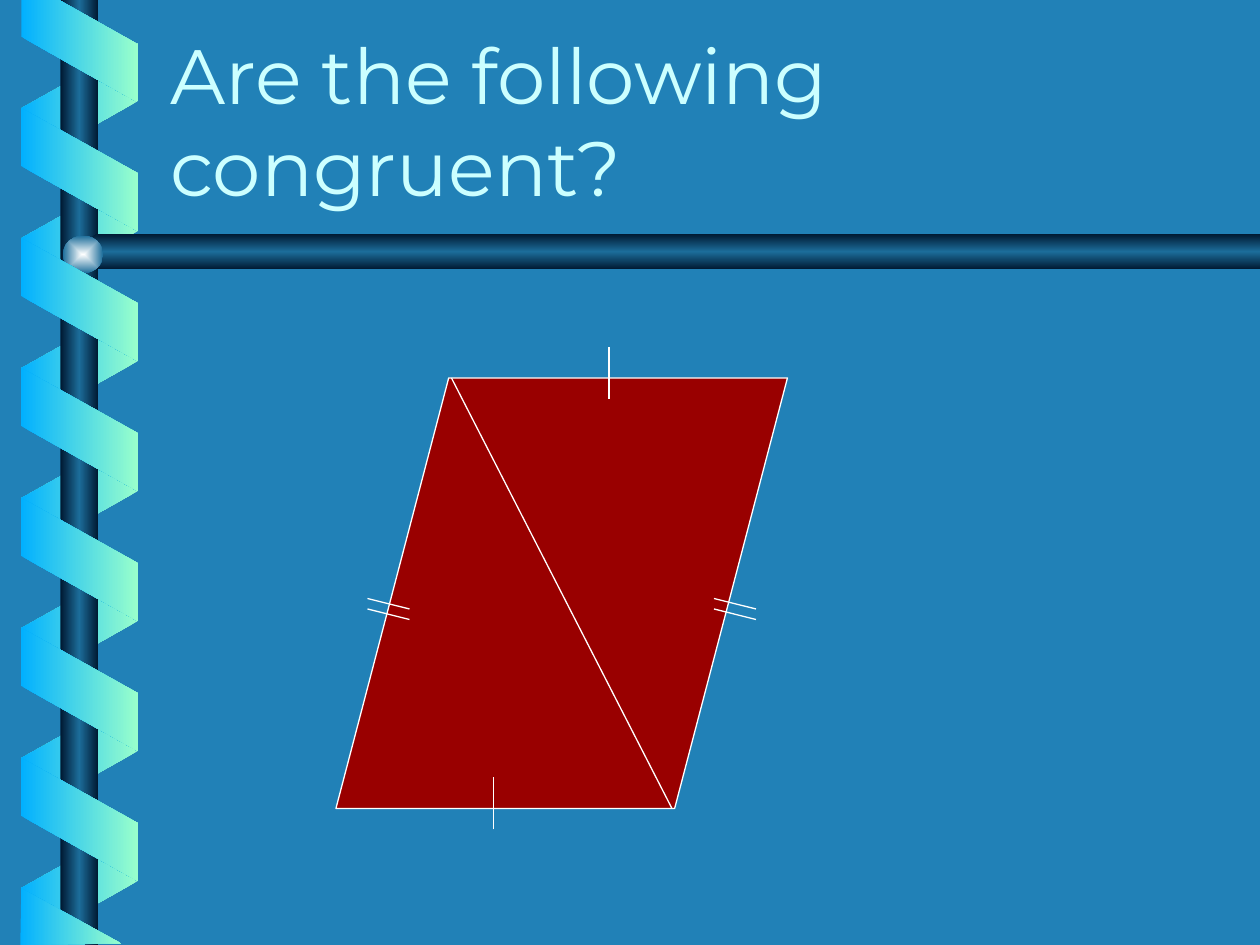
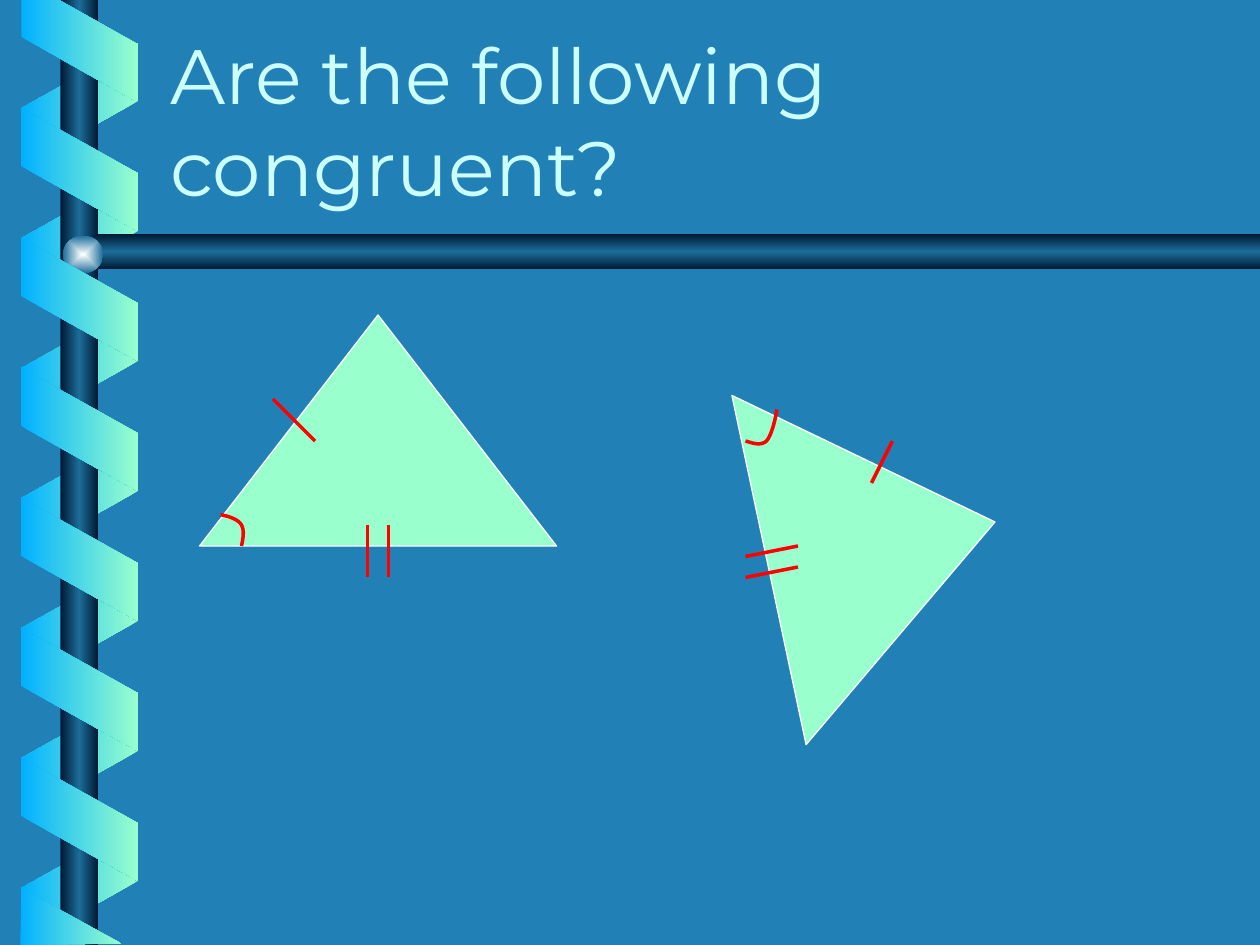
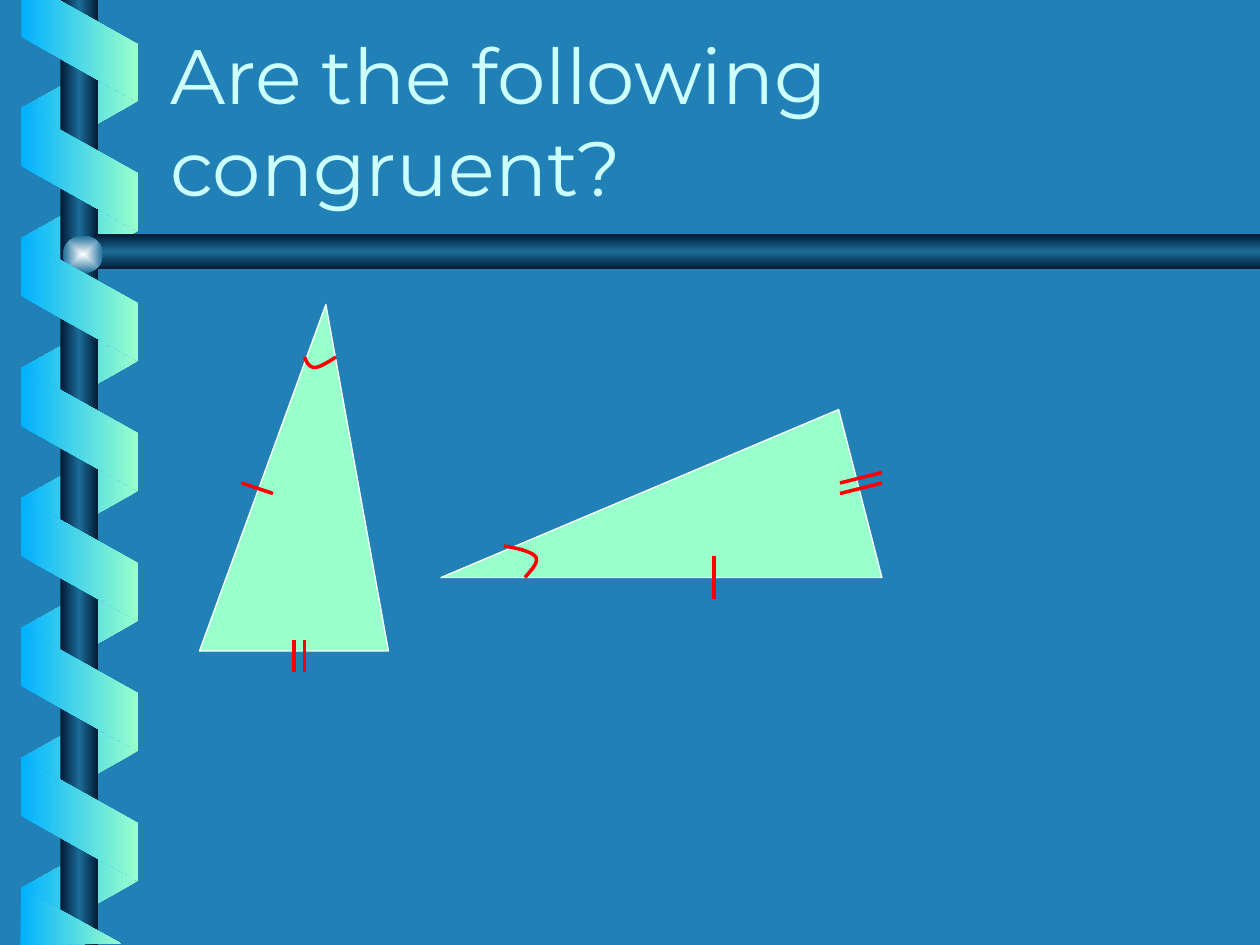
from collections import namedtuple

from lxml import etree
from pptx import Presentation
from pptx import util as u
from pptx.dml.color import RGBColor
from pptx.enum import shapes, text
from pptx.oxml import ns, parse_xml

COLOURS = {
    "background": "2181B7", "title": "CCFFFF", "outline": "FFFFFF",
    "parallelogram": "990000", "triangle": "99FFCC", "mark": "FF0000",
    "ribbon_blue": "01B0FF", "ribbon_green": "99FFCC",
    "pole_edge": "001932", "pole_middle": "1C6D9A", "knob_centre": "FEFFFF",
}
FONT = "Montserrat"
TITLE = "Are the following congruent?"
KIND = shapes.MSO_SHAPE
STEP = 2.54 / 12
POLE = ("pole_edge", "pole_middle", "pole_edge")
RIBBON = ("ribbon_blue", "ribbon_green")

Box = namedtuple("Box", "left top width height")
SLIDE = Box(0, 0, 25.4, 19.05)
SPIRAL = Box(0.36, 0, 2.49, 19.05)
DIVIDER = Box(1.27, 4.72, 24.13, 0.79)
TITLE_BOX = Box(3.18, 0.41, 21.59, 3.99)


def colour(name):
    return RGBColor.from_string(COLOURS[name])


def paint_gradient(shape, names, angle=0, radial=False):
    stops = "".join(
        f'<a:gs pos="{100000 * index // (len(names) - 1)}">'
        f'<a:srgbClr val="{COLOURS[name]}"/></a:gs>'
        for index, name in enumerate(names))
    direction = f'<a:lin ang="{angle * 60000}" scaled="0"/>'
    if radial:
        direction = ('<a:path path="shape"><a:fillToRect l="50000" t="50000" '
                     'r="50000" b="50000"/></a:path>')
    gradient = parse_xml(f'<a:gradFill {ns.nsdecls("a")} rotWithShape="0">'
                         f'<a:gsLst>{stops}</a:gsLst>{direction}</a:gradFill>')
    shape.fill.background()
    properties = shape._element.spPr
    properties.replace(properties.find(ns.qn("a:noFill")), gradient)
    shape.line.fill.background()
    shape.shadow.inherit = False


def add_preset(parent, kind, box, adjustment=None, rotation=0, flip=False):
    shape = parent.shapes.add_shape(kind, *map(u.Cm, box))
    if adjustment is not None:
        shape.adjustments[0] = adjustment
    shape.rotation = rotation
    if flip:
        shape._element.spPr.find(ns.qn("a:xfrm")).set("flipH", "1")
    return shape


def add_outline(parent, points, close):
    points = [(u.Cm(x), u.Cm(y)) for x, y in points]
    builder = parent.shapes.build_freeform(*points[0])
    builder.add_line_segments(points[1:], close=close)
    return builder.convert_to_shape()


def draw_spiral_backs(slide, box):
    group = slide.shapes.add_group_shape()
    for turn in range(7):
        strip = Box(box.left, box.top + 0.93 + 2.62 * turn, box.width, 2.36)
        shape = add_preset(group, KIND.PARALLELOGRAM, strip, 0.56, 90, True)
        paint_gradient(shape, RIBBON[::-1])


def draw_spiral_fronts(slide, box):
    group = slide.shapes.add_group_shape()
    for turn in range(6):
        strip = Box(box.left, box.top + 2.24 + 2.62 * turn, box.width, 2.36)
        shape = add_preset(group, KIND.PARALLELOGRAM, strip, 0.56, 270)
        paint_gradient(shape, RIBBON)
    top_fold = [(0.07, 0), (0.07, 0.74), (2.41, 2.06), (2.41, 0.89), (0.83, 0)]
    bottom_fold = [(2.08, 19.02), (0.07, 17.91), (0.05, 19.05)]
    for fold in (top_fold, bottom_fold):
        points = [(box.left + x, box.top + y) for x, y in fold]
        paint_gradient(add_outline(group, points, True), RIBBON)


def draw_pole(slide, box):
    pole = Box(box.left + 0.86, box.top, 0.76, box.height)
    paint_gradient(add_preset(slide, KIND.RECTANGLE, pole), POLE)


def draw_divider(slide, box):
    bar = Box(box.left + 0.25, box.top, box.width - 0.25, 0.71)
    shape = add_preset(slide, KIND.PENTAGON, bar, 0.59, flip=True)
    paint_gradient(shape, POLE, 90)
    knob = Box(box.left, box.top + 0.03, 0.81, 0.76)
    paint_gradient(add_preset(slide, KIND.OVAL, knob),
                   ("knob_centre", "pole_middle"), radial=True)


def draw_title(slide, box):
    frame = slide.shapes.add_textbox(*map(u.Cm, box)).text_frame
    frame.word_wrap = True
    frame.auto_size = text.MSO_AUTO_SIZE.SHAPE_TO_FIT_TEXT
    frame.vertical_anchor = text.MSO_ANCHOR.BOTTOM
    run = frame.paragraphs[0].add_run()
    run.text = TITLE
    run.font.name = FONT
    run.font.size = u.Pt(44)
    run.font.color.rgb = colour("title")


class Figure:
    def __init__(self, slide, left, top):
        self.group = slide.shapes.add_group_shape()
        self.left, self.top = left, top

    def place(self, x, y):
        return (self.left + x) * STEP, (self.top + y) * STEP

    def add_polygon(self, kind, fill, x, y, width, height, adjustment=0.5, rotation=0):
        box = Box(*self.place(x, y), width * STEP, height * STEP)
        shape = add_preset(self.group, kind, box, adjustment, rotation)
        shape.fill.solid()
        shape.fill.fore_color.rgb = colour(fill)
        shape.line.color.rgb = colour("outline")
        shape.line.width = u.Pt(0.75)
        shape.shadow.inherit = False

    def add_lines(self, ends, name="mark", width=2):
        for x1, y1, x2, y2 in ends:
            connector = self.group.shapes.add_connector(
                shapes.MSO_CONNECTOR.STRAIGHT,
                *map(u.Cm, self.place(x1, y1) + self.place(x2, y2)))
            connector.line.color.rgb = colour(name)
            connector.line.width = u.Pt(width)
            etree.SubElement(connector._element.spPr, ns.qn("a:effectLst"))

    def add_angle_mark(self, knots, pieces=10):
        points = [knots[0]]
        for start in range(0, len(knots) - 1, 3):
            a, b, c, d = knots[start:start + 4]
            for piece in range(1, pieces + 1):
                t = piece / pieces
                weights = ((1 - t) ** 3, 3 * t * (1 - t) ** 2, 3 * t * t * (1 - t), t ** 3)
                points.append(tuple(
                    sum(weight * knot[axis] for weight, knot in zip(weights, (a, b, c, d)))
                    for axis in (0, 1)))
        shape = add_outline(self.group, [self.place(*point) for point in points], False)
        shape.fill.background()
        shape.line.color.rgb = colour("mark")
        shape.line.width = u.Pt(2)
        shape.shadow.inherit = False


def draw_split_parallelogram(slide):
    figure = Figure(slide, 32, 33)
    figure.add_polygon(KIND.PARALLELOGRAM, "parallelogram", 0, 3, 43, 41, 0.262)
    diagonal = [(11, 3, 32, 44)]
    side_ticks = [(x, y, x + 4, y + 1) for x in (3, 36) for y in (24, 25)]
    base_ticks = [(15, 46, 15, 41), (26, 5, 26, 0)]
    figure.add_lines(diagonal + side_ticks + base_ticks, "outline", 0.75)


def draw_turned_triangles(slide):
    figure = Figure(slide, 19, 30)
    figure.add_polygon(KIND.ISOSCELES_TRIANGLE, "triangle", 0, 0, 34, 22)
    figure.add_polygon(KIND.ISOSCELES_TRIANGLE, "triangle", 48, 11, 34, 22, rotation=78)
    figure.add_lines([(7, 8, 11, 12), (66, 12, 64, 16)])
    figure.add_lines([(x, 20, x, 25) for x in (16, 18)])
    figure.add_lines([(57, y, 52, y + 1) for y in (22, 24)])
    figure.add_angle_mark([(2, 19), (2.84, 19.2), (3.68, 19.44), (4, 20),
                           (4.28, 20.52), (4.16, 21.24), (4, 22)])
    figure.add_angle_mark([(52, 12), (52.76, 12.24), (53.48, 12.48), (54, 12),
                           (54.44, 11.52), (54.8, 10.2), (55, 9)])


def draw_scalene_triangles(slide):
    figure = Figure(slide, 19, 29)
    figure.add_polygon(KIND.ISOSCELES_TRIANGLE, "triangle", 0, 0, 18, 33, 0.669)
    figure.add_polygon(KIND.ISOSCELES_TRIANGLE, "triangle", 23, 10, 42, 16, 0.902)
    figure.add_lines([(4, 17, 7, 18), (49, 28, 49, 24)])
    figure.add_lines([(x, 32, x, 35) for x in (9, 10)])
    figure.add_lines([(61, y, 65, y - 1) for y in (17, 18)])
    figure.add_angle_mark([(10, 5), (10.24, 5.6), (10.48, 6), (11, 6),
                           (11.5, 6), (12.7, 5.2), (13, 5)])
    figure.add_angle_mark([(29, 23), (30.32, 23.2), (31.64, 23.56), (32, 24),
                           (32.36, 24.52), (31.64, 25.24), (31, 26)])


def add_question_slide(presentation, draw_figure):
    slide = presentation.slides.add_slide(presentation.slide_layouts[6])
    slide.background.fill.solid()
    slide.background.fill.fore_color.rgb = colour("background")
    draw_spiral_backs(slide, SPIRAL)
    draw_pole(slide, SPIRAL)
    draw_divider(slide, DIVIDER)
    draw_spiral_fronts(slide, SPIRAL)
    draw_title(slide, TITLE_BOX)
    draw_figure(slide)


def main():
    presentation = Presentation()
    presentation.slide_width = u.Cm(SLIDE.width)
    presentation.slide_height = u.Cm(SLIDE.height)
    for draw_figure in (draw_split_parallelogram, draw_turned_triangles,
                        draw_scalene_triangles):
        add_question_slide(presentation, draw_figure)
    presentation.save("out.pptx")


if __name__ == "__main__":
    main()
